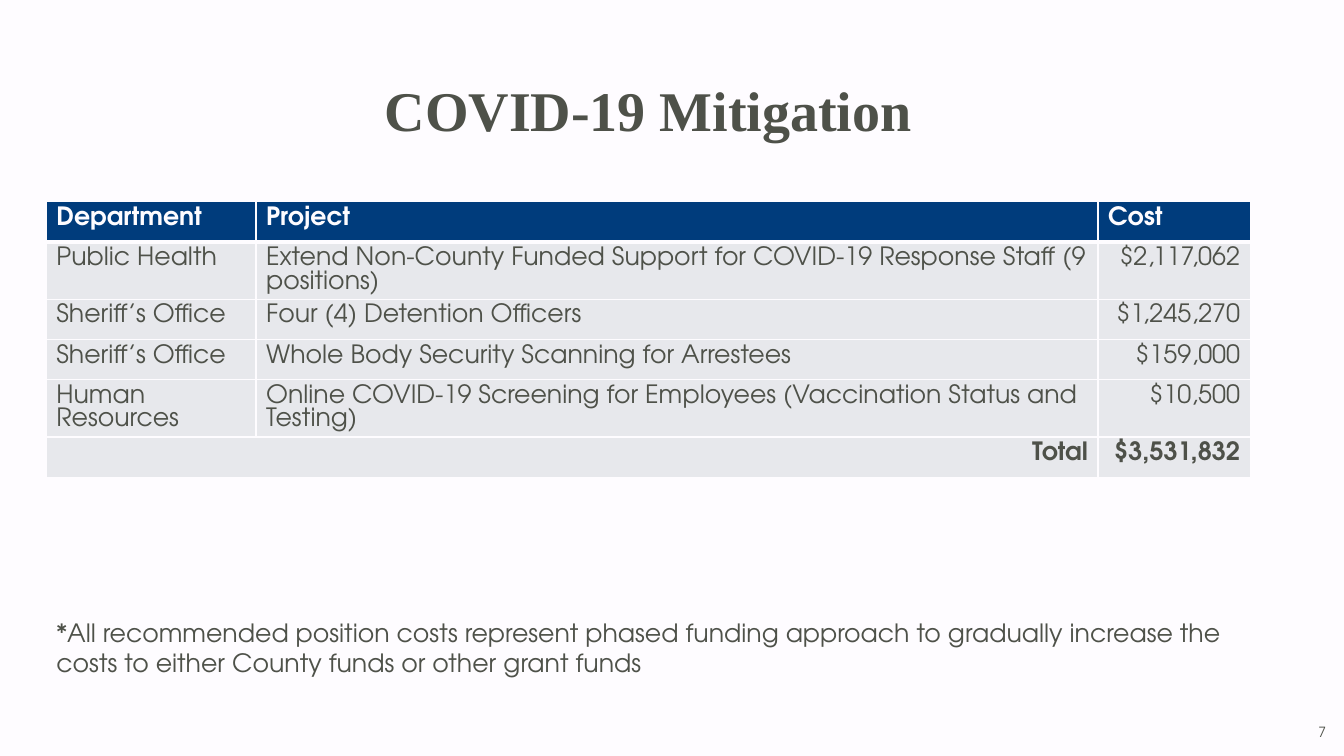
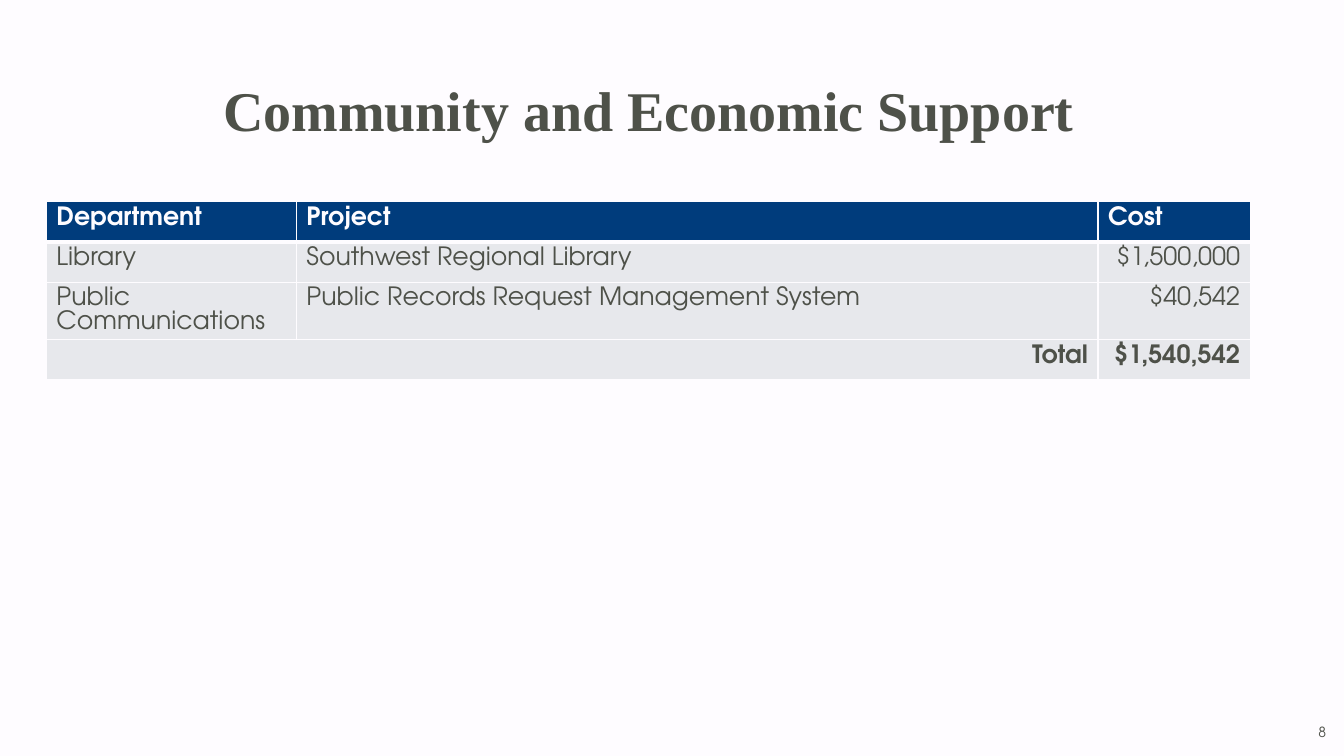
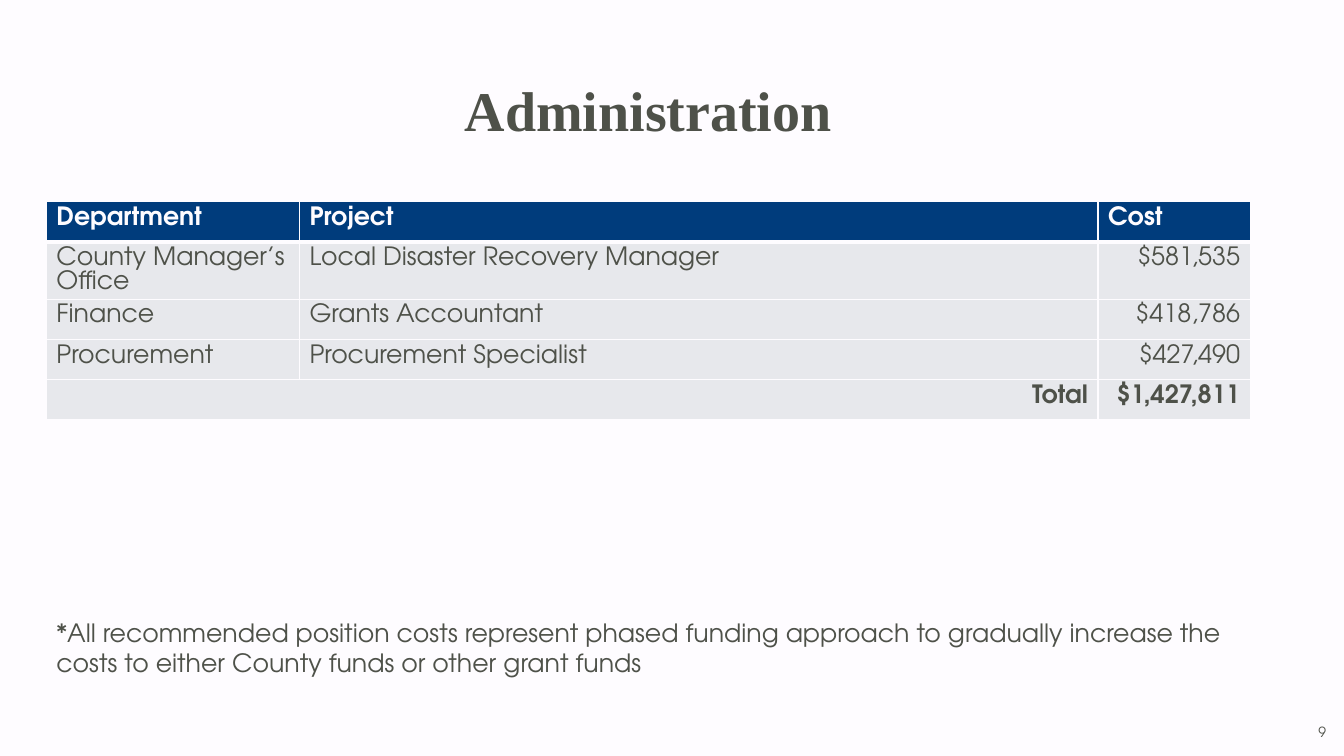
from dataclasses import dataclass

from lxml import etree
from pptx import Presentation
from pptx.dml.color import RGBColor
from pptx.enum.text import MSO_ANCHOR, MSO_AUTO_SIZE, PP_ALIGN
from pptx.oxml.ns import qn
from pptx.util import Inches, Pt

LEFT, CENTER, RIGHT = PP_ALIGN.LEFT, PP_ALIGN.CENTER, PP_ALIGN.RIGHT
MIDDLE = MSO_ANCHOR.MIDDLE
GROW = MSO_AUTO_SIZE.SHAPE_TO_FIT_TEXT

PAPER = RGBColor(0xFE, 0xFC, 0xFF)
INK = RGBColor(0x4E, 0x51, 0x49)
NAVY = RGBColor(0x00, 0x3C, 0x7C)
GRAY = RGBColor(0xE7, 0xE8, 0xEC)
TITLE_FONT = "Times New Roman"
BODY_FONT = "TeX Gyre Adventor"

MARGIN, CONTENT_W = 0.46, 11.94
TABLE_TOP, ROW_H, COST_W = 2, 0.4, 1.51
FIRST_NUMBER = 7
HEADINGS = ("Department", "Project", "Cost")
FOOTNOTE = ("*All recommended position costs represent phased funding approach to "
            "gradually increase the costs to either County funds or other grant funds")


@dataclass(frozen=True)
class Project:
    department: str
    name: str
    cost: str


@dataclass(frozen=True)
class Budget:
    title: str
    department_w: float
    projects: tuple[Project, ...]
    total: str
    footnote: str = ""


BUDGETS = (
    Budget("COVID-19 Mitigation", 2.08, (
        Project("Public Health",
                "Extend Non-County Funded Support for COVID-19 Response Staff (9 positions)",
                "$2,117,062"),
        Project("Sheriff’s Office", "Four (4) Detention Officers", "$1,245,270"),
        Project("Sheriff’s Office", "Whole Body Security Scanning for Arrestees", "$159,000"),
        Project("Human Resources",
                "Online COVID-19 Screening for Employees (Vaccination Status and Testing)",
                "$10,500"),
    ), "$3,531,832", FOOTNOTE),
    Budget("Community and Economic Support", 2.48, (
        Project("Library", "Southwest Regional Library", "$1,500,000"),
        Project("Public Communications", "Public Records Request Management System", "$40,542"),
    ), "$1,540,542"),
    Budget("Administration", 2.51, (
        Project("County Manager’s Office", "Local Disaster Recovery Manager", "$581,535"),
        Project("Finance", "Grants Accountant", "$418,786"),
        Project("Procurement", "Procurement Specialist", "$427,490"),
    ), "$1,427,811", FOOTNOTE),
)


def write(tf, text: str, *, size: float = 18, font: str = BODY_FONT,
          color: RGBColor = INK, bold: bool = False, align=LEFT,
          spacing: float | None = None) -> None:
    p = tf.paragraphs[0]
    p.alignment = align
    p.line_spacing = spacing
    r = p.add_run()
    r.text = text
    r.font.size = Pt(size)
    r.font.name = font
    r.font.bold = bold
    r.font.color.rgb = color


def add_text(s, text: str, left: float, top: float, width: float, height: float, **style):
    tf = s.shapes.add_textbox(Inches(left), Inches(top), Inches(width), Inches(height)).text_frame
    tf.word_wrap = True
    write(tf, text, **style)
    return tf


def set_borders(cell, top: float = 1, bottom: float = 1) -> None:
    tc_pr = cell._tc.get_or_add_tcPr()
    for side, points in (("L", 1), ("R", 1), ("T", top), ("B", bottom)):
        ln = etree.SubElement(tc_pr, qn(f"a:ln{side}"), w=str(Pt(points)))
        fill = etree.SubElement(ln, qn("a:solidFill"))
        etree.SubElement(fill, qn("a:srgbClr"), val=str(PAPER))


def add_budget_table(s, budget: Budget) -> None:
    rows = [HEADINGS]
    rows += [(p.department, p.name, p.cost) for p in budget.projects]
    rows.append(("Total", "", budget.total))
    last = len(rows) - 1
    table = s.shapes.add_table(len(rows), len(HEADINGS), Inches(MARGIN), Inches(TABLE_TOP),
                               Inches(CONTENT_W), Inches(ROW_H * len(rows))).table
    table.horz_banding = False
    widths = (budget.department_w, CONTENT_W - budget.department_w - COST_W, COST_W)
    for column, width in zip(table.columns, widths):
        column.width = Inches(width)
    table.cell(last, 0).merge(table.cell(last, 1))

    for i, row in enumerate(rows):
        header, total = i == 0, i == last
        for j, text in enumerate(row):
            cell = table.cell(i, j)
            set_borders(cell, top=3 if i == 1 else 1, bottom=3 if header else 1)
            cell.fill.solid()
            cell.fill.fore_color.rgb = NAVY if header else GRAY
            if text:
                align = RIGHT if total or (j == 2 and not header) else LEFT
                write(cell.text_frame, text, color=PAPER if header else INK,
                      bold=header or total, align=align)


def style_layout(layout) -> None:
    """Set the background and title position that every slide inherits."""
    layout.background.fill.solid()
    layout.background.fill.fore_color.rgb = PAPER
    title = next(ph for ph in layout.placeholders if ph.placeholder_format.idx == 0)
    title.left, title.top = Inches(MARGIN), Inches(0.4)
    title.width, title.height = Inches(CONTENT_W), Inches(1.45)
    title.text_frame.vertical_anchor = MIDDLE


def add_budget_slide(prs, layout, budget: Budget, number: int) -> None:
    s = prs.slides.add_slide(layout)
    write(s.shapes.title.text_frame, budget.title, size=40, font=TITLE_FONT,
          bold=True, align=CENTER, spacing=0.9)
    add_budget_table(s, budget)
    add_text(s, str(number), 11.75, 7.13, 1.5, 0.25, size=10, align=RIGHT)
    if budget.footnote:
        add_text(s, budget.footnote, MARGIN, 6.07, 12.01, 0.71).auto_size = GROW


def main() -> None:
    prs = Presentation()
    prs.slide_width, prs.slide_height = Inches(13.33), Inches(7.5)
    layout = prs.slide_layouts.get_by_name("Title Only")
    style_layout(layout)
    for number, budget in enumerate(BUDGETS, FIRST_NUMBER):
        add_budget_slide(prs, layout, budget, number)
    prs.save("out.pptx")


if __name__ == "__main__":
    main()
